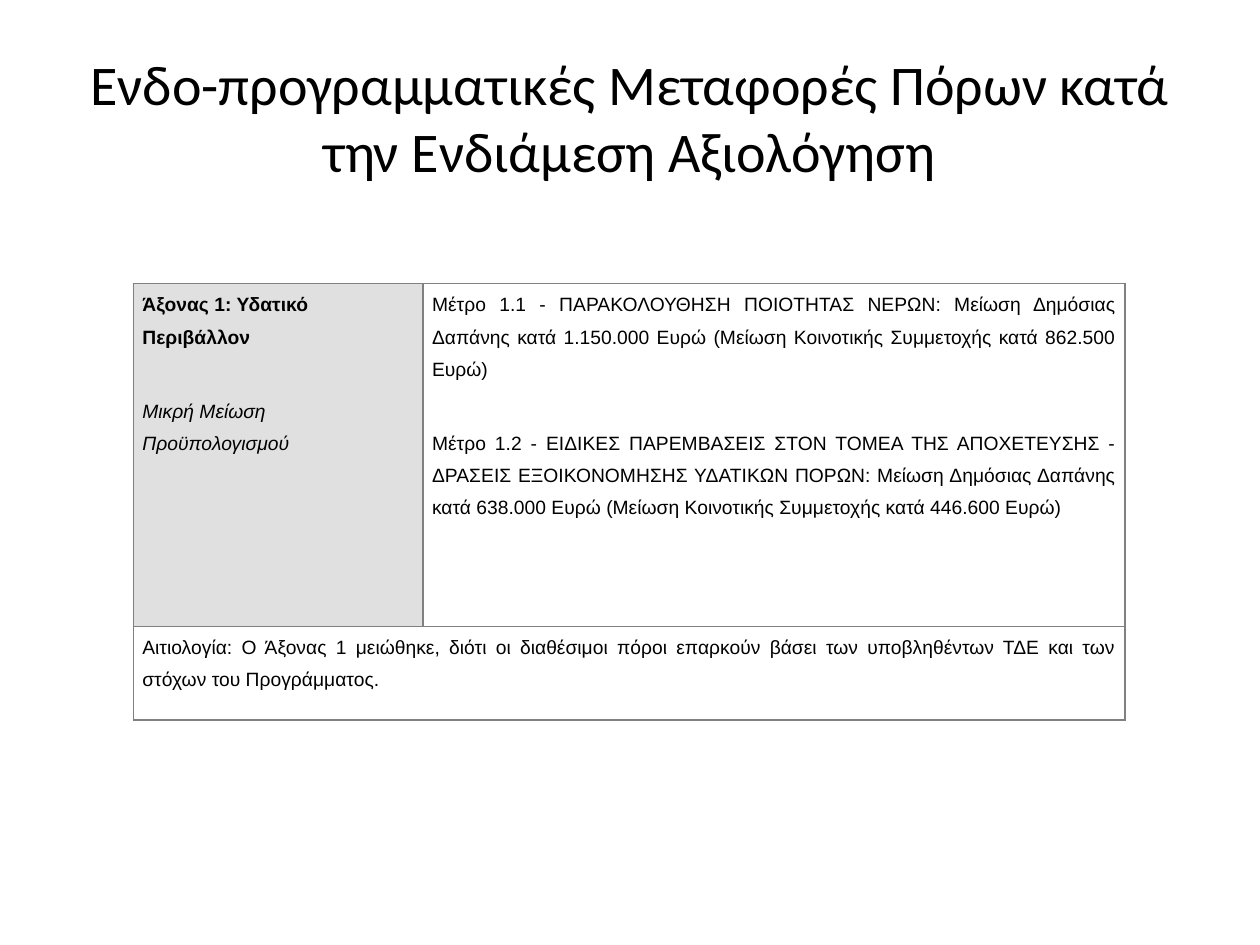
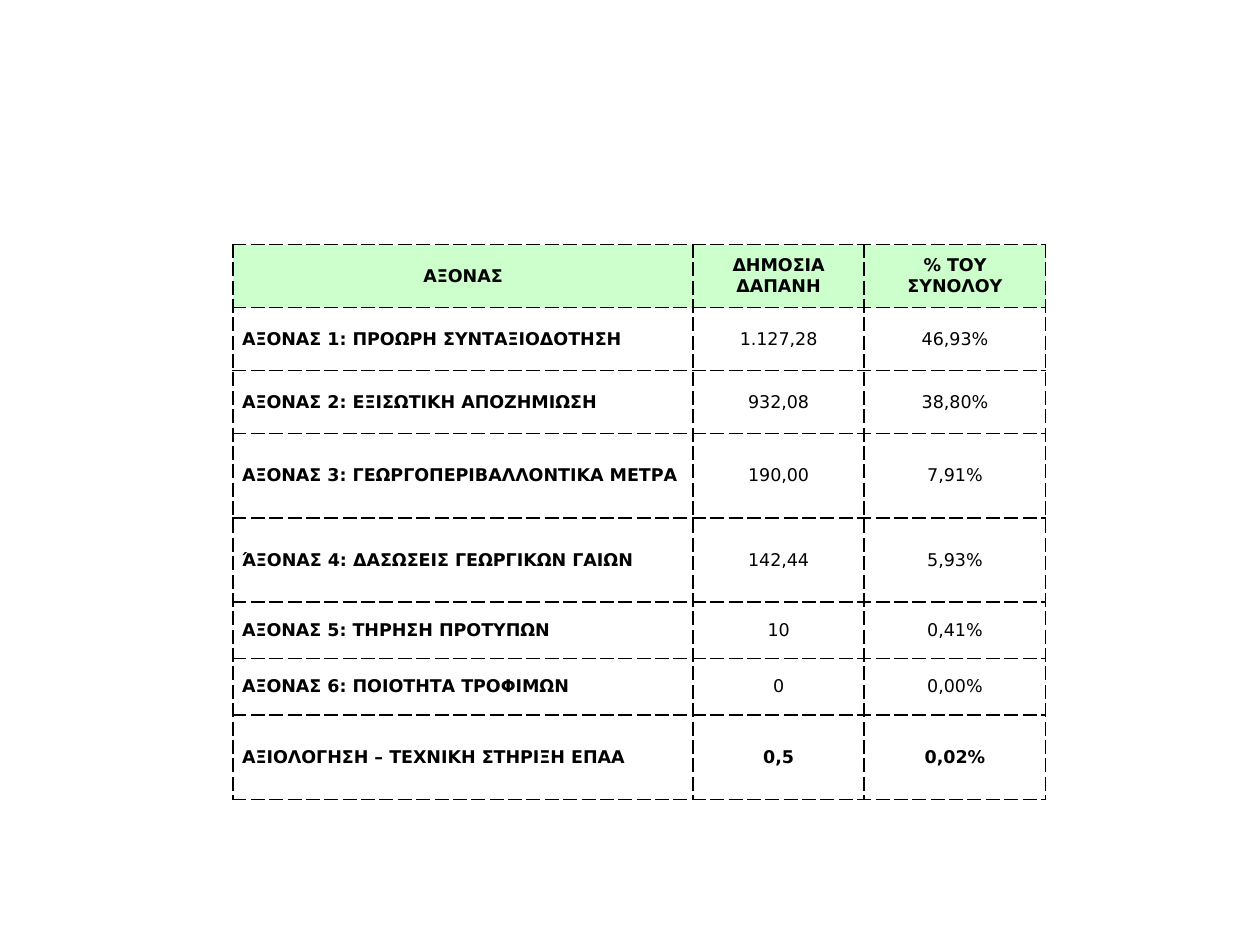
from dataclasses import dataclass

from lxml.etree import SubElement
from pptx import Presentation
from pptx.dml.color import RGBColor
from pptx.enum.text import MSO_ANCHOR as Anchor, MSO_AUTO_SIZE as AutoSize, PP_ALIGN as Align
from pptx.oxml.ns import qn
from pptx.util import Cm, Pt

BLACK = "000000"
GREY = "808080"
PALE_GREY = "E0E0E0"
PALE_GREEN = "CCFFCC"
WHITE = "FFFFFF"
TITLE_ONLY, BLANK = 5, 6
CELL_MARGIN = 0.18


@dataclass(frozen=True)
class Para:
    text: str
    align: Align = Align.LEFT
    bold: bool = False
    italic: bool = False


@dataclass(frozen=True)
class CellText:
    paras: tuple[Para, ...]
    fill: str | None = None


@dataclass(frozen=True)
class TableStyle:
    font: str
    size: float
    border: str
    dash: str
    anchor: Anchor
    line_spacing: float = 1.0
    before: float = 0
    after: float = 0


@dataclass(frozen=True)
class TableBox:
    left: float
    top: float
    cols: tuple[float, ...]
    rows: tuple[float, ...]


def rgb(color: str) -> RGBColor:
    return RGBColor.from_string(color)


def format_font(p, name: str, size: float, bold: bool = False, italic: bool = False) -> None:
    for r in p.runs:
        f = r.font
        f.name, f.size, f.bold, f.italic = name, Pt(size), bold, italic
        f.color.rgb = rgb(BLACK)


def set_title(slide, text: str) -> None:
    sp = slide.shapes.title
    sp.left, sp.top, sp.width, sp.height = Cm(1.27), Cm(0.76), Cm(22.86), Cm(3.18)
    tf = sp.text_frame
    tf.text = text
    tf.word_wrap = True
    tf.auto_size = AutoSize.NONE
    tf.vertical_anchor = Anchor.MIDDLE
    p = tf.paragraphs[0]
    p.alignment = Align.CENTER
    format_font(p, "Calibri", 32)


def set_borders(cell, color: str, dash: str) -> None:
    tc_pr = cell._tc.get_or_add_tcPr()
    for i, side in enumerate(("lnL", "lnR", "lnT", "lnB")):
        ln = SubElement(tc_pr, qn(f"a:{side}"), w=str(Pt(1)))
        fill = SubElement(ln, qn("a:solidFill"))
        SubElement(fill, qn("a:srgbClr"), val=color)
        SubElement(ln, qn("a:prstDash"), val=dash)
        tc_pr.insert(i, ln)


def fill_cell(cell, content: CellText, style: TableStyle) -> None:
    tf = cell.text_frame
    for i, para in enumerate(content.paras):
        p = tf.add_paragraph() if i else tf.paragraphs[0]
        p.text = para.text
        p.alignment = para.align
        p.line_spacing = style.line_spacing
        p.space_before, p.space_after = Pt(style.before), Pt(style.after)
        format_font(p, style.font, style.size, para.bold, para.italic)
    if content.fill:
        cell.fill.solid()
        cell.fill.fore_color.rgb = rgb(content.fill)


def add_table(slide, box: TableBox, style: TableStyle, rows: list[list[CellText]]) -> None:
    frame = slide.shapes.add_table(
        len(box.rows), len(box.cols), Cm(box.left), Cm(box.top),
        Cm(sum(box.cols)), Cm(sum(box.rows)),
    )
    table = frame.table
    table.first_row = table.horz_banding = False
    for col, width in zip(table.columns, box.cols):
        col.width = Cm(width)
    for row, height in zip(table.rows, box.rows):
        row.height = Cm(height)
    for cell in table.iter_cells():
        cell.margin_left = cell.margin_right = Cm(CELL_MARGIN)
        cell.margin_top = cell.margin_bottom = 0
        cell.vertical_anchor = style.anchor
        cell.fill.background()
        set_borders(cell, style.border, style.dash)
    for r, contents in enumerate(rows):
        for c, content in enumerate(contents):
            fill_cell(table.cell(r, c), content, style)
        if len(contents) < len(box.cols):
            table.cell(r, len(contents) - 1).merge(table.cell(r, len(box.cols) - 1))


TRANSFER_STYLE = TableStyle("Arial", 11, GREY, "solid", Anchor.TOP, 1.5, 14.4, 9.6)
TRANSFER_BOX = TableBox(2.69, 5.72, (5.84, 14.15), (6.91, 1.88))
TRANSFER_ROWS = [
    [
        CellText((
            Para("Άξονας 1: Υδατικό Περιβάλλον", bold=True),
            Para("Μικρή Μείωση Προϋπολογισμού", italic=True),
        ), PALE_GREY),
        CellText((
            Para("Μέτρο 1.1 - ΠΑΡΑΚΟΛΟΥΘΗΣΗ ΠΟΙΟΤΗΤΑΣ ΝΕΡΩΝ: Μείωση Δημόσιας Δαπάνης "
                 "κατά 1.150.000 Ευρώ (Μείωση Κοινοτικής Συμμετοχής κατά 862.500 Ευρώ)",
                 Align.JUSTIFY),
            Para("Μέτρο 1.2 - ΕΙΔΙΚΕΣ ΠΑΡΕΜΒΑΣΕΙΣ ΣΤΟΝ ΤΟΜΕΑ ΤΗΣ ΑΠΟΧΕΤΕΥΣΗΣ - ΔΡΑΣΕΙΣ "
                 "ΕΞΟΙΚΟΝΟΜΗΣΗΣ ΥΔΑΤΙΚΩΝ ΠΟΡΩΝ: Μείωση Δημόσιας Δαπάνης κατά 638.000 Ευρώ "
                 "(Μείωση Κοινοτικής Συμμετοχής κατά 446.600 Ευρώ)", Align.JUSTIFY),
        )),
    ],
    [
        CellText((
            Para("Αιτιολογία: Ο Άξονας 1 μειώθηκε, διότι οι διαθέσιμοι πόροι επαρκούν βάσει "
                 "των υποβληθέντων ΤΔΕ και των στόχων του Προγράμματος.", Align.JUSTIFY),
        )),
    ],
]

BUDGET_STYLE = TableStyle("DejaVu Sans", 10, BLACK, "dash", Anchor.MIDDLE)
BUDGET_BOX = TableBox(4.7, 4.93, (9.27, 3.45, 3.66),
                      (1.27, 1.27, 1.27, 1.7, 1.7, 1.14, 1.14, 1.7))
BUDGET_HEADER = ("ΑΞΟΝΑΣ", "ΔΗΜΟΣΙΑ ΔΑΠΑΝΗ", "% ΤΟΥ ΣΥΝΟΛΟΥ")
BUDGET_AXES = [
    ("ΑΞΟΝΑΣ 1: ΠΡΟΩΡΗ ΣΥΝΤΑΞΙΟΔΟΤΗΣΗ", "1.127,28", "46,93%"),
    ("ΑΞΟΝΑΣ 2: ΕΞΙΣΩΤΙΚΗ ΑΠΟΖΗΜΙΩΣΗ", "932,08", "38,80%"),
    ("ΑΞΟΝΑΣ 3: ΓΕΩΡΓΟΠΕΡΙΒΑΛΛΟΝΤΙΚΑ ΜΕΤΡΑ", "190,00", "7,91%"),
    ("ΆΞΟΝΑΣ 4: ΔΑΣΩΣΕΙΣ ΓΕΩΡΓΙΚΩΝ ΓΑΙΩΝ", "142,44", "5,93%"),
    ("ΑΞΟΝΑΣ 5: ΤΗΡΗΣΗ ΠΡΟΤΥΠΩΝ", "10", "0,41%"),
    ("ΑΞΟΝΑΣ 6: ΠΟΙΟΤΗΤΑ ΤΡΟΦΙΜΩΝ", "0", "0,00%"),
]
BUDGET_SUPPORT = ("ΑΞΙΟΛΟΓΗΣΗ – ΤΕΧΝΙΚΗ ΣΤΗΡΙΞΗ ΕΠΑΑ", "0,5", "0,02%")


def budget_row(texts: tuple[str, ...], label_align: Align = Align.JUSTIFY,
               bold_values: bool = False, fill: str | None = None) -> list[CellText]:
    label, *values = texts
    paras = [Para(label, label_align, bold=True)]
    paras += [Para(value, Align.CENTER, bold=bold_values) for value in values]
    return [CellText((para,), fill) for para in paras]


def main() -> None:
    prs = Presentation()
    prs.slide_width, prs.slide_height = Cm(25.4), Cm(19.05)

    s = prs.slides.add_slide(prs.slide_layouts[TITLE_ONLY])
    set_title(s, "Ενδο-προγραμματικές Μεταφορές Πόρων κατά την Ενδιάμεση Αξιολόγηση")
    add_table(s, TRANSFER_BOX, TRANSFER_STYLE, TRANSFER_ROWS)

    s = prs.slides.add_slide(prs.slide_layouts[BLANK])
    add_table(s, BUDGET_BOX, BUDGET_STYLE, [
        budget_row(BUDGET_HEADER, Align.CENTER, True, PALE_GREEN),
        *(budget_row(axis) for axis in BUDGET_AXES),
        budget_row(BUDGET_SUPPORT, bold_values=True, fill=WHITE),
    ])

    prs.save("out.pptx")


if __name__ == "__main__":
    main()
